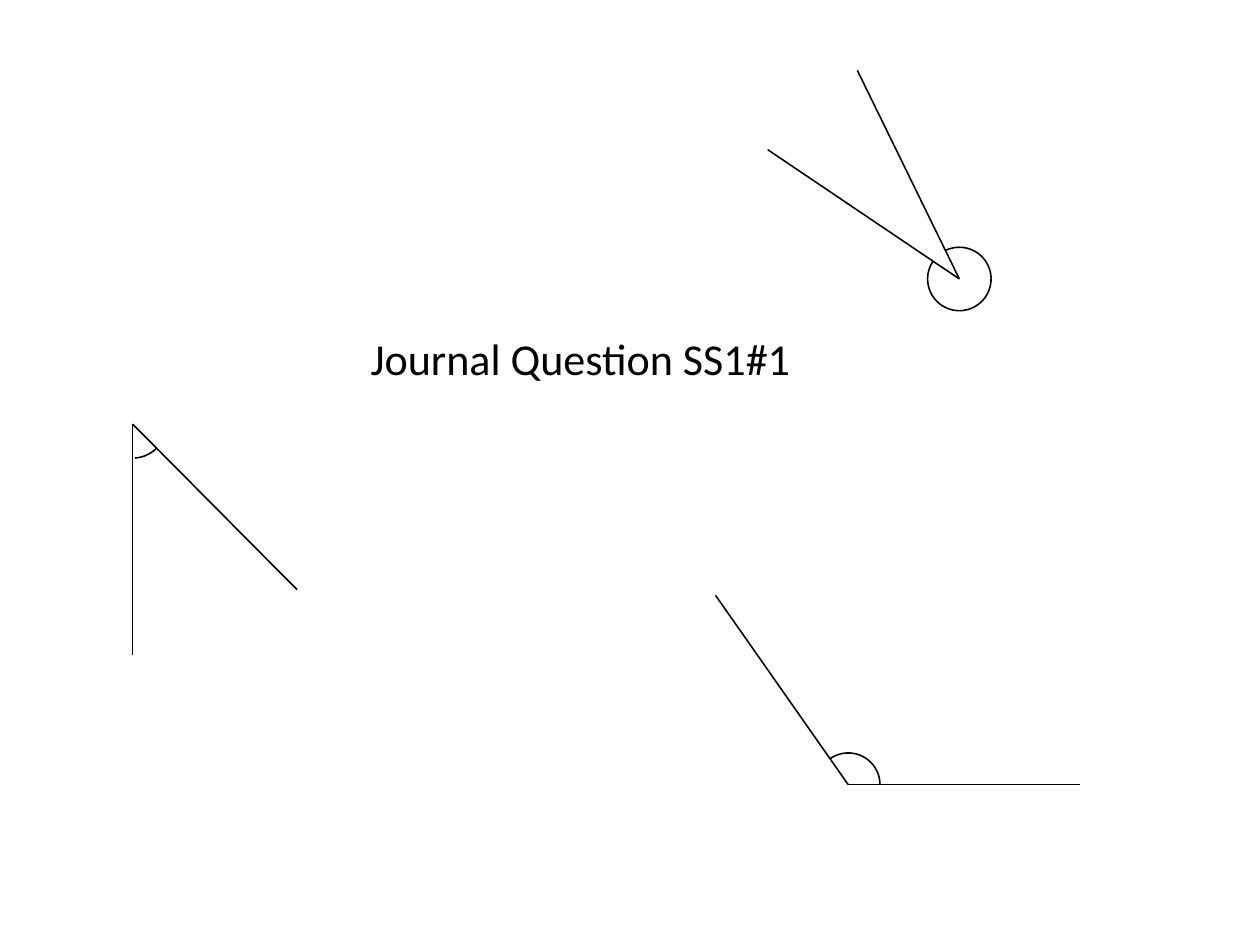
from math import cos, radians, sin

from lxml import etree
from pptx import Presentation
from pptx import util as u
from pptx.dml.color import RGBColor
from pptx.enum import shapes, text
from pptx.oxml.ns import qn

COLOURS = {"ink": "000000"}

# vertex, ends of the two rays, arc radius, arc start and end in degrees clockwise from east
ANGLES = [
    ((84.24, 269.28), [(84.24, 416.16), (188.64, 374.4)], 21.6, 86, 44),
    ((538.56, 498.24), [(685.44, 498.24), (454.32, 378)], 20.16, 0, -124),
    ((609.12, 177.12), [(544.32, 44.64), (487.44, 95.04)], 20.16, 213, -116),
]


class Sketch:
    font = "Calibri"
    line_width = 1
    arc_step = 8

    def __init__(self, page):
        self.page = page

    def ink(self, line):
        line.color.rgb = RGBColor.from_string(COLOURS["ink"])
        line.width = u.Pt(self.line_width)

    def title(self, words, left, top, width, height, size):
        box = self.page.shapes.add_textbox(*map(u.Pt, (left, top, width, height)))
        frame = box.text_frame
        frame.word_wrap = True
        frame.auto_size = text.MSO_AUTO_SIZE.SHAPE_TO_FIT_TEXT
        span = frame.paragraphs[0].add_run()
        span.text = words
        span.font.name = self.font
        span.font.size = u.Pt(size)
        span.font.color.rgb = RGBColor.from_string(COLOURS["ink"])

    def ray(self, group, start, end):
        connector = group.shapes.add_connector(
            shapes.MSO_CONNECTOR.STRAIGHT, *map(u.Pt, (*start, *end)))
        self.ink(connector.line)
        etree.SubElement(connector._element.spPr, qn("a:effectLst"))

    def arc(self, group, centre, radius, first, last):
        steps = max(1, round(abs(last - first) / self.arc_step))
        turns = [radians(first + (last - first) * i / steps) for i in range(steps + 1)]
        points = [(u.Pt(centre[0] + radius * cos(turn)),
                   u.Pt(centre[1] + radius * sin(turn))) for turn in turns]
        builder = group.shapes.build_freeform(*points[0])
        builder.add_line_segments(points[1:], close=False)
        curve = builder.convert_to_shape()
        curve.fill.background()
        curve.shadow.inherit = False
        self.ink(curve.line)

    def angle(self, vertex, ends, radius, first, last):
        """Draw two rays from a vertex and the arc that marks their angle."""
        group = self.page.shapes.add_group_shape()
        for end in ends:
            self.ray(group, vertex, end)
        self.arc(group, vertex, radius, first, last)


def main():
    deck = Presentation()
    deck.slide_width, deck.slide_height = u.Pt(800), u.Pt(600)
    sketch = Sketch(deck.slides.add_slide(deck.slide_layouts[6]))
    sketch.title("Journal Question SS1#1", 228.24, 206.64, 332.64, 41.04, 28)
    for angle in ANGLES:
        sketch.angle(*angle)
    deck.save("out.pptx")


if __name__ == "__main__":
    main()
